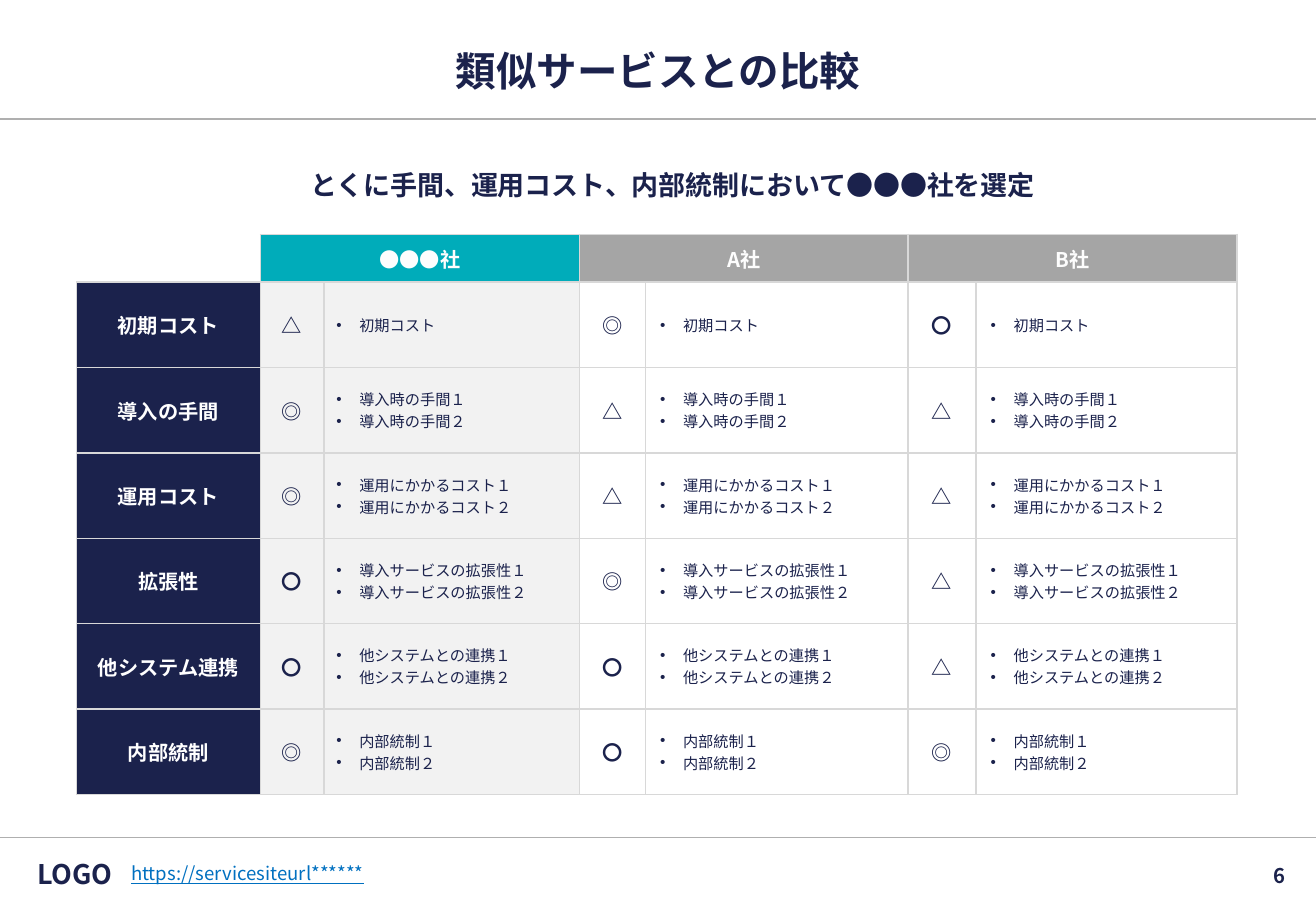
from dataclasses import dataclass

from lxml.etree import SubElement
from pptx import Presentation
from pptx.dml.color import RGBColor
from pptx.enum.shapes import MSO_CONNECTOR
from pptx.enum.text import MSO_ANCHOR, MSO_AUTO_SIZE, PP_ALIGN
from pptx.oxml.ns import qn
from pptx.util import Cm, Pt


@dataclass(frozen=True)
class Theme:
    font: str = "Noto Sans CJK JP"
    navy: str = "1B224C"
    teal: str = "00ACBA"
    gray: str = "A5A5A5"
    pale: str = "F2F2F2"
    white: str = "FFFFFF"
    header_text: str = "FDFDFD"
    link: str = "0070C0"
    rule: str = "AFAFAF"
    border: str = "D8D8D8"
    title: int = 24
    lead: int = 16
    label: int = 12
    url: int = 11
    note: int = 9


THEME = Theme()
SLIDE_W, SLIDE_H = 27.51, 19.05

COMPANIES = ["●●●社", "A社", "B社"]
CRITERIA = [  # row label, one mark per company, notes
    ("初期コスト", "△◎〇", ["初期コスト"]),
    ("導入の手間", "◎△△", ["導入時の手間１", "導入時の手間２"]),
    ("運用コスト", "◎△△", ["運用にかかるコスト１", "運用にかかるコスト２"]),
    ("拡張性", "〇◎△", ["導入サービスの拡張性１", "導入サービスの拡張性２"]),
    ("他システム連携", "〇〇△", ["他システムとの連携１", "他システムとの連携２"]),
    ("内部統制", "◎〇◎", ["内部統制１", "内部統制２"]),
]
COLUMN_WIDTHS = [3.84, 1.33, 5.35, 1.37, 5.49, 1.42, 5.46]
HEADER_HEIGHT = 1.0


# Text helpers
def style_paragraph(p, size, color, bold=True, align=PP_ALIGN.CENTER):
    p.alignment = align
    p.font.size = Pt(size)
    p.font.bold = bold
    p.font.color.rgb = RGBColor.from_string(color)
    p.font.name = THEME.font
    SubElement(p.font._element, qn("a:ea"), typeface=THEME.font)


def indent(p, left, first):
    p_pr = p._p.get_or_add_pPr()
    p_pr.set("marL", str(Cm(left)))
    p_pr.set("indent", str(Cm(first)))
    return p_pr


def add_bullet(p):
    p_pr = indent(p, 0.74, -0.48)
    bullet_font = p_pr.makeelement(qn("a:buFont"), {"typeface": "Arial"})
    bullet = p_pr.makeelement(qn("a:buChar"), {"char": "•"})
    p_pr.insert(0, bullet_font)
    p_pr.insert(1, bullet)


def fill_frame(tf, text, size, color, margins=(0.1, 0.1, 0.1, 0.1),
               anchor=MSO_ANCHOR.MIDDLE, **style):
    tf.word_wrap = True
    tf.auto_size = MSO_AUTO_SIZE.NONE
    tf.vertical_anchor = anchor
    tf.margin_left, tf.margin_top, tf.margin_right, tf.margin_bottom = map(Cm, margins)
    p = tf.paragraphs[0]
    p.text = text
    style_paragraph(p, size, color, **style)
    return p


def add_text(slide, box, text, size, color, **options):
    tb = slide.shapes.add_textbox(*map(Cm, box))
    return fill_frame(tb.text_frame, text, size, color, **options)


def add_rule(slide, y):
    line = slide.shapes.add_connector(
        MSO_CONNECTOR.STRAIGHT, 0, Cm(y), Cm(SLIDE_W), Cm(y))
    line.line.color.rgb = RGBColor.from_string(THEME.rule)
    line.line.width = Pt(0.75)
    SubElement(line._element.spPr, qn("a:effectLst"))


# Table helpers
def set_borders(cell, sides):
    tc_pr = cell._tc.get_or_add_tcPr()
    for side in sides:
        ln = SubElement(tc_pr, qn(f"a:ln{side}"), w=str(Pt(1)))
        fill = SubElement(ln, qn("a:solidFill"))
        SubElement(fill, qn("a:srgbClr"), val=THEME.border)


def set_cell(cell, lines, fill, color, size=THEME.label, bold=True,
             align=PP_ALIGN.CENTER, left=0.05, right=0.05, bullets=False, sides="LRTB"):
    set_borders(cell, sides)
    cell.fill.solid()
    cell.fill.fore_color.rgb = RGBColor.from_string(fill)
    cell.vertical_anchor = MSO_ANCHOR.MIDDLE
    cell.margin_left, cell.margin_right = Cm(left), Cm(right)
    cell.margin_top = cell.margin_bottom = 0
    tf = cell.text_frame
    tf.text = "\n".join(lines)
    for p in tf.paragraphs:
        style_paragraph(p, size, color, bold, align)
        if bullets:
            add_bullet(p)


# Slide regions
def add_heading(slide, box):
    left, top, width, height = box
    title = slide.shapes.title
    title.left, title.top, title.width, title.height = map(Cm, (left, top, width, 1.0))
    p = fill_frame(title.text_frame, "類似サービスとの比較", THEME.title, THEME.navy,
                   margins=(0.1, 0.2, 0.1, 0.1))
    p.line_spacing = 0.9
    add_rule(slide, top + 1.5)
    p = add_text(slide, (left, top + height - 1.1, width, 1.1),
                 "とくに手間、運用コスト、内部統制において●●●社を選定",
                 THEME.lead, THEME.navy, anchor=MSO_ANCHOR.TOP)
    p.line_spacing = 1.3
    indent(p, 1.27, -0.64)


def add_comparison(slide, box):
    height = box[3]
    table = slide.shapes.add_table(
        len(CRITERIA) + 1, len(COLUMN_WIDTHS), *map(Cm, box)).table
    table.first_row = table.horz_banding = False
    for column, width in zip(table.columns, COLUMN_WIDTHS):
        column.width = Cm(width)
    for row in table.rows:
        row.height = Cm((height - HEADER_HEIGHT) / len(CRITERIA))
    table.rows[0].height = Cm(HEADER_HEIGHT)

    # Company headers, each over a mark column and a notes column
    set_cell(table.cell(0, 0), [""], THEME.white, THEME.navy, sides="RB")
    for i, company in enumerate(COMPANIES):
        first, second = table.cell(0, 2 * i + 1), table.cell(0, 2 * i + 2)
        fill = THEME.gray if i else THEME.teal
        set_cell(first, [company], fill, THEME.header_text)
        set_cell(second, [""], fill, THEME.header_text)
        first.merge(second)

    # Criteria rows
    for r, (label, marks, notes) in enumerate(CRITERIA, start=1):
        set_cell(table.cell(r, 0), [label], THEME.navy, THEME.white, left=0.2, right=0.2)
        for i, mark in enumerate(marks):
            fill = THEME.white if i else THEME.pale
            set_cell(table.cell(r, 2 * i + 1), [mark], fill, THEME.navy)
            set_cell(table.cell(r, 2 * i + 2), notes, fill, THEME.navy, THEME.note,
                     bold=False, align=PP_ALIGN.LEFT, left=0.05 if i else 0,
                     right=0.2, bullets=True)


def add_footer(slide, box):
    left, top, width, height = box
    add_rule(slide, top)
    add_text(slide, (left + 0.53, top + 0.26, 2.08, 1.0), "LOGO", THEME.lead, THEME.navy)
    p = add_text(slide, (left + 2.64, top + 0.4, 14.6, 0.66),
                 "https://servicesiteurl******", THEME.url, THEME.link,
                 anchor=MSO_ANCHOR.TOP, bold=False, align=PP_ALIGN.LEFT)
    p.font.underline = True
    add_text(slide, (left + width - 6.58, top + 0.28, 6.2, 1.0), "6",
             THEME.label, THEME.navy, margins=(0.25, 0.13, 0.25, 0.13),
             align=PP_ALIGN.RIGHT)


def main():
    prs = Presentation()
    prs.slide_width, prs.slide_height = Cm(SLIDE_W), Cm(SLIDE_H)
    slide = prs.slides.add_slide(prs.slide_layouts[5])
    add_heading(slide, (1.65, 0.99, 24.21, 3.33))
    add_comparison(slide, (1.6, 4.9, sum(COLUMN_WIDTHS), 11.71))
    add_footer(slide, (0, 17.52, SLIDE_W, SLIDE_H - 17.52))
    prs.save("out.pptx")


if __name__ == "__main__":
    main()
